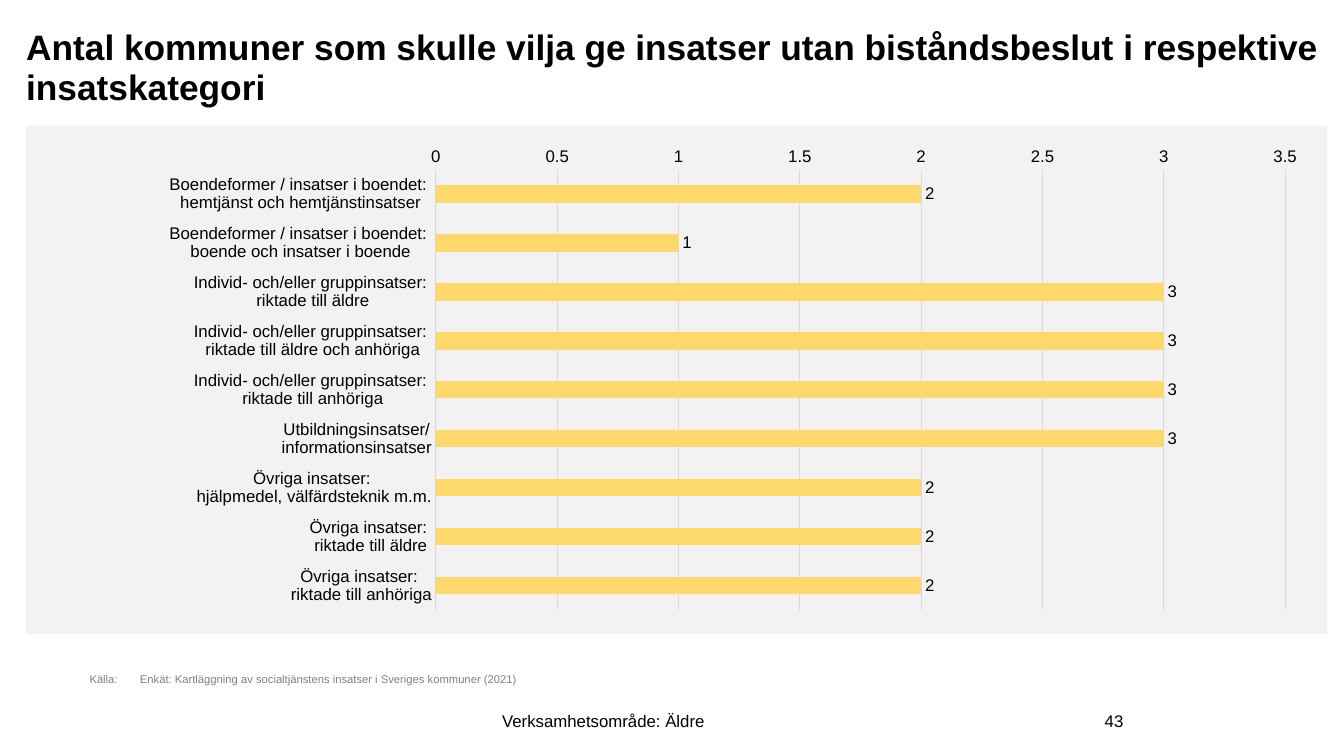
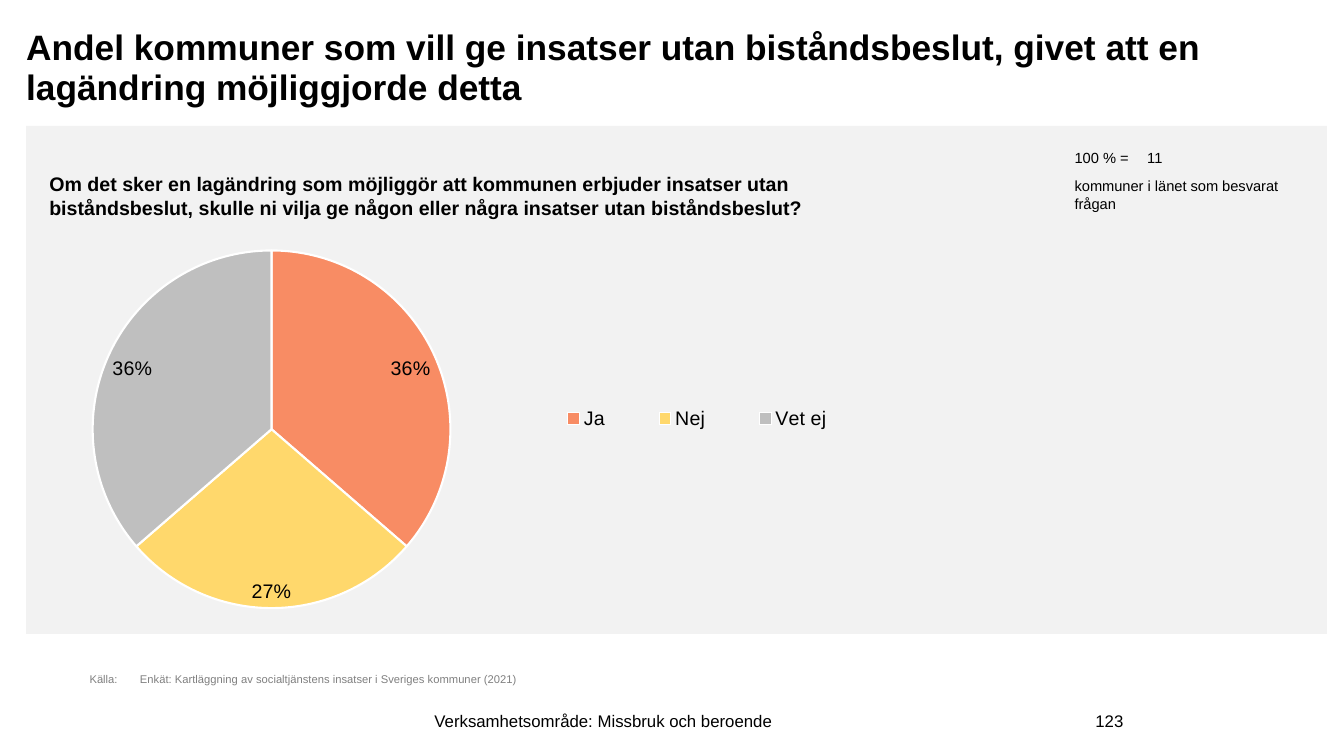
from pptx import Presentation
from pptx.chart.data import CategoryChartData
from pptx.dml.color import RGBColor
from pptx.enum.chart import (XL_CHART_TYPE, XL_LABEL_POSITION, XL_LEGEND_POSITION,
                             XL_TICK_MARK)
from pptx.enum.shapes import MSO_SHAPE
from pptx.enum.text import MSO_ANCHOR, PP_ALIGN
from pptx.oxml.ns import qn
from pptx.util import Inches, Pt
from lxml import etree

BAR, PIE = XL_CHART_TYPE.BAR_CLUSTERED, XL_CHART_TYPE.PIE
OUTSIDE_END, BEST_FIT = XL_LABEL_POSITION.OUTSIDE_END, XL_LABEL_POSITION.BEST_FIT
LEGEND_RIGHT, NO_TICK = XL_LEGEND_POSITION.RIGHT, XL_TICK_MARK.NONE
RECTANGLE = MSO_SHAPE.RECTANGLE
TOP, MIDDLE, BOTTOM = MSO_ANCHOR.TOP, MSO_ANCHOR.MIDDLE, MSO_ANCHOR.BOTTOM
LEFT, CENTER, RIGHT = PP_ALIGN.LEFT, PP_ALIGN.CENTER, PP_ALIGN.RIGHT

FONT = "Arial"
COLORS = {"text": "000000", "white": "FFFFFF", "panel": "F2F2F2", "source": "808080",
          "grid": "D9D9D9", "orange": "F88C64", "yellow": "FFD86C", "gray": "BFBFBF"}
MARGIN, CONTENT_WIDTH = 0.26, 12.9
SOURCE = "\tKälla:\tEnkät: Kartläggning av socialtjänstens insatser i Sveriges kommuner (2021)"


def color(name):
    return RGBColor.from_string(COLORS[name])


def set_font(font, size, name="text", bold=False):
    font.name, font.size, font.bold = FONT, Pt(size), bold
    font.color.rgb = color(name)


def write(shape, text, size=12, name="text", bold=False, align=LEFT, anchor=TOP,
          side_inset=0.1, line_spacing=None, space_after=None, indent=0, tabs=()):
    """Put one formatted paragraph into a shape."""
    frame = shape.text_frame
    frame.word_wrap, frame.vertical_anchor = True, anchor
    frame.margin_left = frame.margin_right = Inches(side_inset)
    paragraph = frame.paragraphs[0]
    paragraph.text, paragraph.alignment = text, align
    if line_spacing:
        paragraph.line_spacing = line_spacing
    if space_after:
        paragraph.space_after = Pt(space_after)
    if tabs:
        properties = paragraph._p.get_or_add_pPr()
        properties.set("marL", str(Inches(indent)))
        properties.set("indent", "0")
        tab_list = etree.SubElement(properties, qn("a:tabLst"))
        for position in tabs:
            etree.SubElement(tab_list, qn("a:tab"), pos=str(Inches(position)), algn="l")
    set_font(paragraph.font, size, name, bold)


def set_layout(parent, index, box, inner=False):
    """Place a plot area or legend by fractions of the chart."""
    for old in parent.findall(qn("c:layout")):
        parent.remove(old)
    layout = etree.Element(qn("c:layout"))
    manual = etree.SubElement(layout, qn("c:manualLayout"))
    settings = [("layoutTarget", "inner")] if inner else []
    settings += [("xMode", "edge"), ("yMode", "edge"), *zip("xywh", box)]
    for tag, value in settings:
        etree.SubElement(manual, qn("c:" + tag), val=str(value))
    parent.insert(index, layout)


class Deck:
    def __init__(self):
        self.presentation = Presentation()
        self.presentation.slide_width = Inches(13.33)
        self.presentation.slide_height = Inches(7.5)
        self.slide = None

    def add_slide(self, title, area, number):
        """Start a slide with its shared panel, title, footer and source."""
        self.slide = self.presentation.slides.add_slide(self.presentation.slide_layouts[6])
        self.rectangle(MARGIN, 1.25, CONTENT_WIDTH, 5.04, "panel")
        self.text(title, MARGIN, 0.15, CONTENT_WIDTH, 0.98, size=25.2, bold=True,
                  anchor=BOTTOM, side_inset=0, line_spacing=0.95)
        self.text(f"Verksamhetsområde: {area}", 2.69, 6.95, 6.59, 0.4,
                  align=CENTER, anchor=MIDDLE)
        self.text(str(number), 9.85, 6.95, 1.39, 0.4, align=RIGHT, anchor=MIDDLE)
        source = self.rectangle(MARGIN, 6.29, CONTENT_WIDTH, 0.56, "white")
        write(source, SOURCE, size=8, name="source", anchor=BOTTOM, space_after=2,
              indent=0.03, tabs=(1.03, 2.03))

    def rectangle(self, left, top, width, height, fill):
        shape = self.slide.shapes.add_shape(RECTANGLE, Inches(left), Inches(top),
                                            Inches(width), Inches(height))
        shape.shadow.inherit = False
        shape.fill.solid()
        shape.fill.fore_color.rgb = color(fill)
        shape.line.fill.background()
        return shape

    def text(self, text, left, top, width, height, **style):
        box = self.slide.shapes.add_textbox(Inches(left), Inches(top),
                                            Inches(width), Inches(height))
        write(box, text, **style)

    def chart(self, kind, categories, values, box, plot_box, size, label_position,
              number_format="General"):
        data = CategoryChartData(number_format=number_format)
        data.categories = categories
        data.add_series("Series 1", values)
        chart = self.slide.shapes.add_chart(kind, *map(Inches, box), data).chart
        chart.has_title = chart.has_legend = False
        set_font(chart.font, size)
        set_layout(chart._chartSpace.chart.plotArea, 0, plot_box, inner=True)
        plot = chart.plots[0]
        plot.vary_by_categories = kind == PIE
        plot.has_data_labels = True
        labels = plot.data_labels
        labels.show_value, labels.show_percentage = True, False
        labels.number_format, labels.number_format_is_linked = number_format, False
        labels.position = label_position
        set_font(labels.font, size)
        return chart

    def bar_chart(self, categories, values, box, plot_box):
        chart = self.chart(BAR, categories, values, box, plot_box, 12, OUTSIDE_END)
        plot = chart.plots[0]
        plot.gap_width = 182
        fill = plot.series[0].format.fill
        fill.solid()
        fill.fore_color.rgb = color("yellow")
        category_axis, value_axis = chart.category_axis, chart.value_axis
        for axis in (category_axis, value_axis):
            axis.major_tick_mark = axis.minor_tick_mark = NO_TICK
            set_font(axis.tick_labels.font, 12)
        category_axis.reverse_order = True
        value_axis.minimum_scale, value_axis.maximum_scale = 0, 3.5
        value_axis.major_unit = 0.5
        value_axis.format.line.fill.background()
        for line in (category_axis.format.line, value_axis.major_gridlines.format.line):
            line.color.rgb, line.width = color("grid"), Pt(0.75)

    def pie_chart(self, slices, box, plot_box, legend_box):
        categories, values, fills = zip(*slices)
        chart = self.chart(PIE, categories, values, box, plot_box, 14, BEST_FIT, "0%")
        for index, name in enumerate(fills):
            point_format = chart.plots[0].series[0].points[index].format
            point_format.fill.solid()
            point_format.fill.fore_color.rgb = color(name)
            point_format.line.color.rgb = color("white")
            point_format.line.width = Pt(1.5)
        chart.has_legend = True
        legend = chart.legend
        legend.position, legend.include_in_layout = LEGEND_RIGHT, False
        set_font(legend.font, 14)
        set_layout(legend._element, 1, legend_box)


def main():
    deck = Deck()

    # Number of municipalities per category
    deck.add_slide("Antal kommuner som skulle vilja ge insatser utan biståndsbeslut "
                   "i respektive insatskategori", "Äldre", 43)
    housing = "Boendeformer / insatser i boendet: \n"
    groups = "Individ- och/eller gruppinsatser: \n"
    other = "Övriga insatser: \n"
    categories = [housing + "hemtjänst och hemtjänstinsatser",
                  housing + "boende och insatser i boende",
                  groups + "riktade till äldre",
                  groups + "riktade till äldre och anhöriga",
                  groups + "riktade till anhöriga",
                  "Utbildningsinsatser/\ninformationsinsatser",
                  other + "hjälpmedel, välfärdsteknik m.m.",
                  other + "riktade till äldre",
                  other + "riktade till anhöriga"]
    deck.bar_chart(categories, (2, 1, 3, 3, 3, 3, 2, 2, 2),
                   (MARGIN, 1.29, 12.82, 4.92), (0.317, 0.08, 0.657, 0.888))

    # Share of municipalities answering yes or no
    deck.add_slide("Andel kommuner som vill ge insatser utan biståndsbeslut, "
                   "givet att en lagändring möjliggjorde detta", "Missbruk och beroende", 123)
    deck.text("Om det sker en lagändring som möjliggör att kommunen erbjuder insatser utan "
              "biståndsbeslut, skulle ni vilja ge någon eller några insatser utan "
              "biståndsbeslut?", 0.39, 1.66, 8.39, 0.57, size=14, bold=True)
    deck.text("kommuner i länet som besvarat frågan", 10.56, 1.71, 2.39, 0.45, size=10.5)
    for text, left in (("100 % =", 10.56), ("11", 11.28)):
        deck.text(text, left, 1.43, 0.82, 0.28, size=10.5)
    deck.pie_chart([("Ja", 0.36, "orange"), ("Nej", 0.27, "yellow"), ("Vet ej", 0.36, "gray")],
                   (0.4, 2.19, 12.53, 3.93), (0.013, 0.075, 0.34, 0.903),
                   (0.38, 0.44, 0.28, 0.12))

    deck.presentation.save("out.pptx")


if __name__ == "__main__":
    main()
